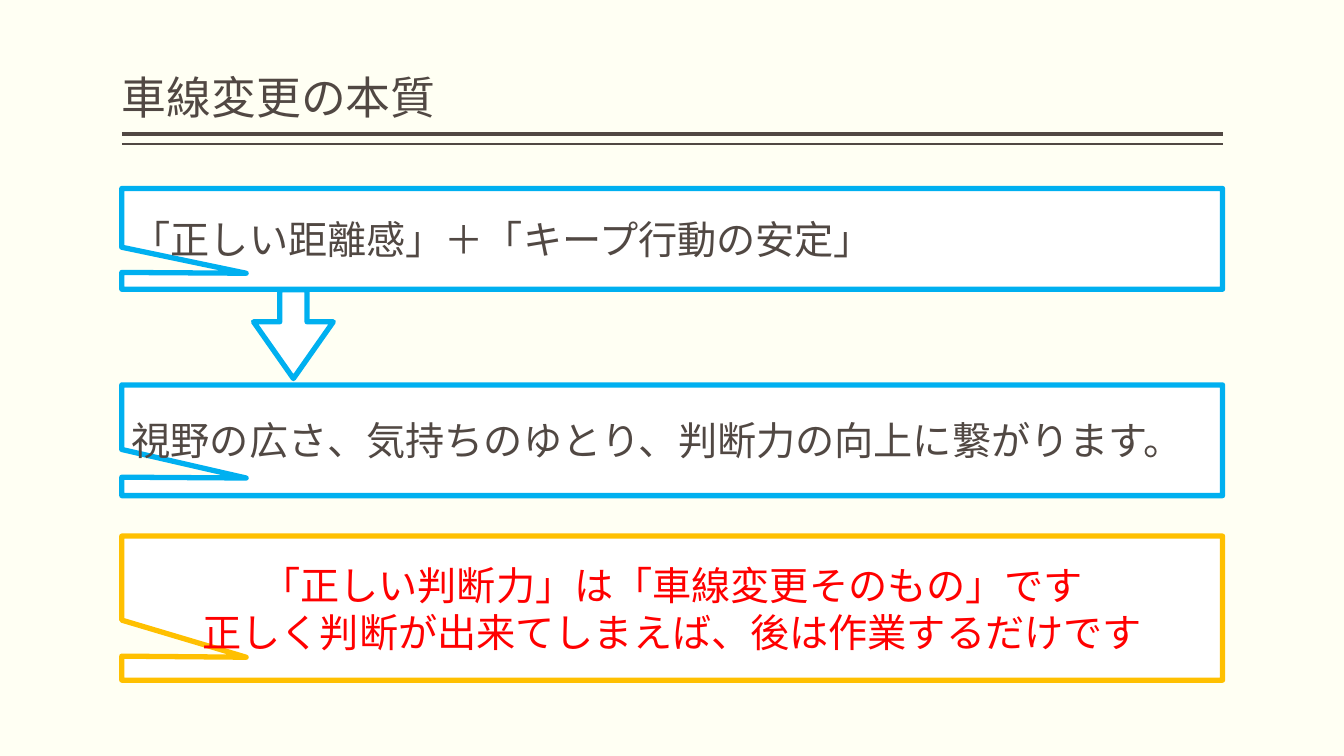
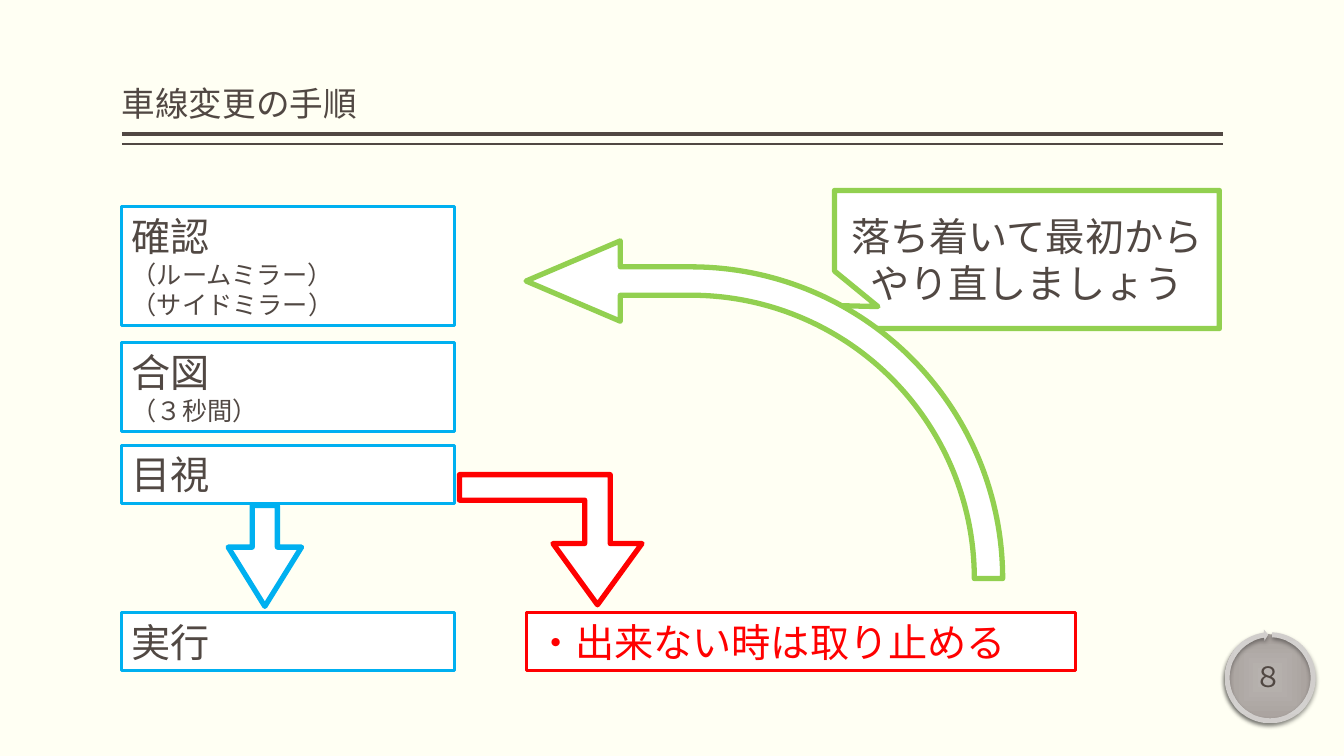
import dataclasses
import pptx
import pptx.dml.color
import pptx.enum.shapes
import pptx.enum.text
import pptx.oxml
import pptx.oxml.ns
import pptx.util

Cm = pptx.util.Cm
Pt = pptx.util.Pt
Form = pptx.enum.shapes.MSO_SHAPE
Align = pptx.enum.text.PP_ALIGN
Anchor = pptx.enum.text.MSO_ANCHOR
qn = pptx.oxml.ns.qn
NS = pptx.oxml.ns.nsdecls("a")


@dataclasses.dataclass(frozen=True)
class Theme:
    # Colours
    paper: str = "FFFFF3"
    white: str = "FFFFFF"
    ink: str = "514843"
    blue: str = "00B0F0"
    gold: str = "FFC000"
    green: str = "92D050"
    red: str = "FF0000"
    disc: tuple = ("B9B4B1", "A9A29E")
    ring: tuple = ("D8D6D5", "D1CECC")
    # Type
    font: str = "Noto Sans CJK JP"
    head: int = 32
    minor: int = 24
    body: int = 28
    note: int = 18
    page: int = 20
    # Line widths
    thick: float = 3.78
    thin: float = 2.25
    # Text column, in cm
    left: float = 3.07
    width: float = 27.74


def rgb(code):
    return pptx.dml.color.RGBColor.from_string(code)


class Deck:
    def __init__(self, theme):
        self.theme = theme
        self.file = pptx.Presentation()
        self.file.slide_width, self.file.slide_height = Cm(33.87), Cm(19.05)
        self.slide = None

    # Text
    def letter(self, shape, text, size, color, align=Align.LEFT,
               anchor=Anchor.TOP, note=None, pad=(0.25, 0.13), tight=False):
        frame = shape.text_frame
        frame.word_wrap = True
        frame.vertical_anchor = anchor
        frame.margin_left = frame.margin_right = Cm(pad[0])
        frame.margin_top = frame.margin_bottom = Cm(pad[1])
        frame.text = text
        para = frame.paragraphs[0]
        para.alignment = align
        if tight:
            para.line_spacing = 0.9
        for rank, run in enumerate(para.runs):
            run.font.size = Pt(note if note and rank else size)
            run.font.name = self.theme.font
            run.font.color.rgb = rgb(color)
            east = pptx.oxml.parse_xml(
                f'<a:ea {NS} typeface="{self.theme.font}"/>')
            run.font._element.find(qn("a:latin")).addnext(east)

    def label(self, place, text, size, **style):
        box = self.slide.shapes.add_textbox(*map(Cm, place))
        self.letter(box, text, size, self.theme.ink, tight=True, **style)

    # Shared frame of a slide
    def begin(self, title, size):
        look = self.theme
        self.slide = self.file.slides.add_slide(self.file.slide_layouts[6])
        fill = self.slide.background.fill
        fill.solid()
        fill.fore_color.rgb = rgb(look.paper)
        for top, width in ((3.38, 3), (3.63, 1)):
            self.rule(top, width)
        self.label((look.left, 0.2, look.width, 3.05), title, size,
                   anchor=Anchor.BOTTOM, pad=(0, 0.13))

    def rule(self, top, width):
        left, right = self.theme.left, self.theme.left + self.theme.width
        line = self.slide.shapes.add_connector(
            pptx.enum.shapes.MSO_CONNECTOR.STRAIGHT,
            Cm(left), Cm(top), Cm(right), Cm(top))
        line.line.color.rgb = rgb(self.theme.ink)
        line.line.width = Pt(width)
        line._element.spPr.append(pptx.oxml.parse_xml(f"<a:effectLst {NS}/>"))

    # Shapes
    def shape(self, form, place, bends=()):
        shape = self.slide.shapes.add_shape(form, *map(Cm, place))
        shape.shadow.inherit = False
        for rank, bend in enumerate(bends):
            shape.adjustments[rank] = bend
        return shape

    def outline(self, form, place, color, width, bends=()):
        shape = self.shape(form, place, bends)
        shape.fill.solid()
        shape.fill.fore_color.rgb = rgb(self.theme.white)
        shape.line.color.rgb = rgb(color)
        shape.line.width = Pt(width)
        return shape

    def box(self, place, text, edge, color=None):
        look = self.theme
        shape = self.outline(Form.RECTANGLE, place, edge, look.thin)
        self.letter(shape, text, look.body, color or look.ink, note=look.note)

    def callout(self, place, text, edge, color=None, align=Align.LEFT):
        look = self.theme
        shape = self.outline(Form.RECTANGULAR_CALLOUT, place, edge,
                             look.thick, (-0.387, 0.341))
        self.letter(shape, text, look.body, color or look.ink,
                    align, Anchor.MIDDLE)

    def arrow(self, form, place, color, bends, flip=False, turn=0):
        shape = self.outline(form, place, color, self.theme.thick, bends)
        shape.rotation = turn
        if flip:
            shape._element.spPr.find(qn("a:xfrm")).set("flipH", "1")

    # Page badge
    def metal(self, form, place, tones, bends=()):
        shape = self.shape(form, place, bends)
        shape.line.fill.background()
        shape.fill.gradient()
        for stop, tone in zip(shape.fill.gradient_stops, tones):
            stop.color.rgb = rgb(tone)
        props = shape._element.spPr
        grad = props.find(qn("a:gradFill"))
        grad.replace(grad.find(qn("a:lin")), pptx.oxml.parse_xml(
            f'<a:path {NS} path="rect"><a:fillToRect l="50000" t="50000" '
            'r="50000" b="50000"/></a:path>'))
        props.find(qn("a:effectLst")).append(pptx.oxml.parse_xml(
            f'<a:outerShdw {NS} blurRad="44450" dist="25400" dir="5400000">'
            '<a:srgbClr val="000000"><a:alpha val="38000"/></a:srgbClr>'
            '</a:outerShdw>'))

    def badge(self, page):
        look = self.theme
        self.metal(Form.OVAL, (30.86, 15.98, 2.18, 2.18), look.disc)
        self.label((31.24, 16.36, 1.47, 1.47), page, look.page,
                   align=Align.CENTER, anchor=Anchor.MIDDLE, pad=(0.08, 0.08))
        self.metal(Form.CIRCULAR_ARROW, (30.78, 15.85, 2.46, 2.46), look.ring,
                   (0.051, 3.275, 157.156, 163.568, 0.059))


def essence(deck):
    look = deck.theme
    deck.begin("車線変更の本質", look.head)
    left, width = look.left, look.width
    deck.callout((left, 4.75, width, 2.54),
                 "「正しい距離感」＋「キープ行動の安定」", look.blue)
    deck.callout((left, 9.7, width, 2.79),
                 "視野の広さ、気持ちのゆとり、判断力の向上に繋がります。", look.blue)
    deck.arrow(Form.DOWN_ARROW, (6.39, 7.3, 2.01, 2.24), look.blue,
               (0.342, 0.711))
    deck.callout((left, 13.51, width, 3.63),
                 "「正しい判断力」は「車線変更そのもの」です\v"
                 "正しく判断が出来てしまえば、後は作業するだけです",
                 look.gold, look.red, Align.CENTER)


def steps(deck):
    look = deck.theme
    deck.begin("車線変更の手順", look.minor)
    deck.badge("８")
    # Steps down the left
    for top, height, text in (
            (5.21, 3, "確認\v（ルームミラー）\v（サイドミラー）"),
            (8.64, 2.24, "合図\v（３秒間）"),
            (11.23, 1.45, "目視"),
            (15.44, 1.45, "実行")):
        deck.box((look.left, top, 8.38, height), text, look.blue)
    deck.arrow(Form.DOWN_ARROW, (5.75, 12.74, 1.85, 2.54), look.blue,
               (0.342, 0.806))
    # Way out and back to the start
    deck.arrow(Form.BENT_UP_ARROW, (11.58, 11.96, 4.6, 3.28), look.red,
               (0.196, 0.342, 0.471), flip=True, turn=180)
    deck.box((13.26, 15.44, 13.84, 1.45), "・出来ない時は取り止める",
             look.red, look.red)
    deck.callout((21.03, 4.8, 9.7, 3.48), "落ち着いて最初からやり直しましょう",
                 look.green, align=Align.CENTER)
    deck.arrow(Form.BENT_ARROW, (13.26, 6.07, 12.01, 8.51), look.green,
               (0.084, 0.119, 0.279, 0.954), flip=True)


def main():
    deck = Deck(Theme())
    essence(deck)
    steps(deck)
    deck.file.save("out.pptx")


if __name__ == "__main__":
    main()
